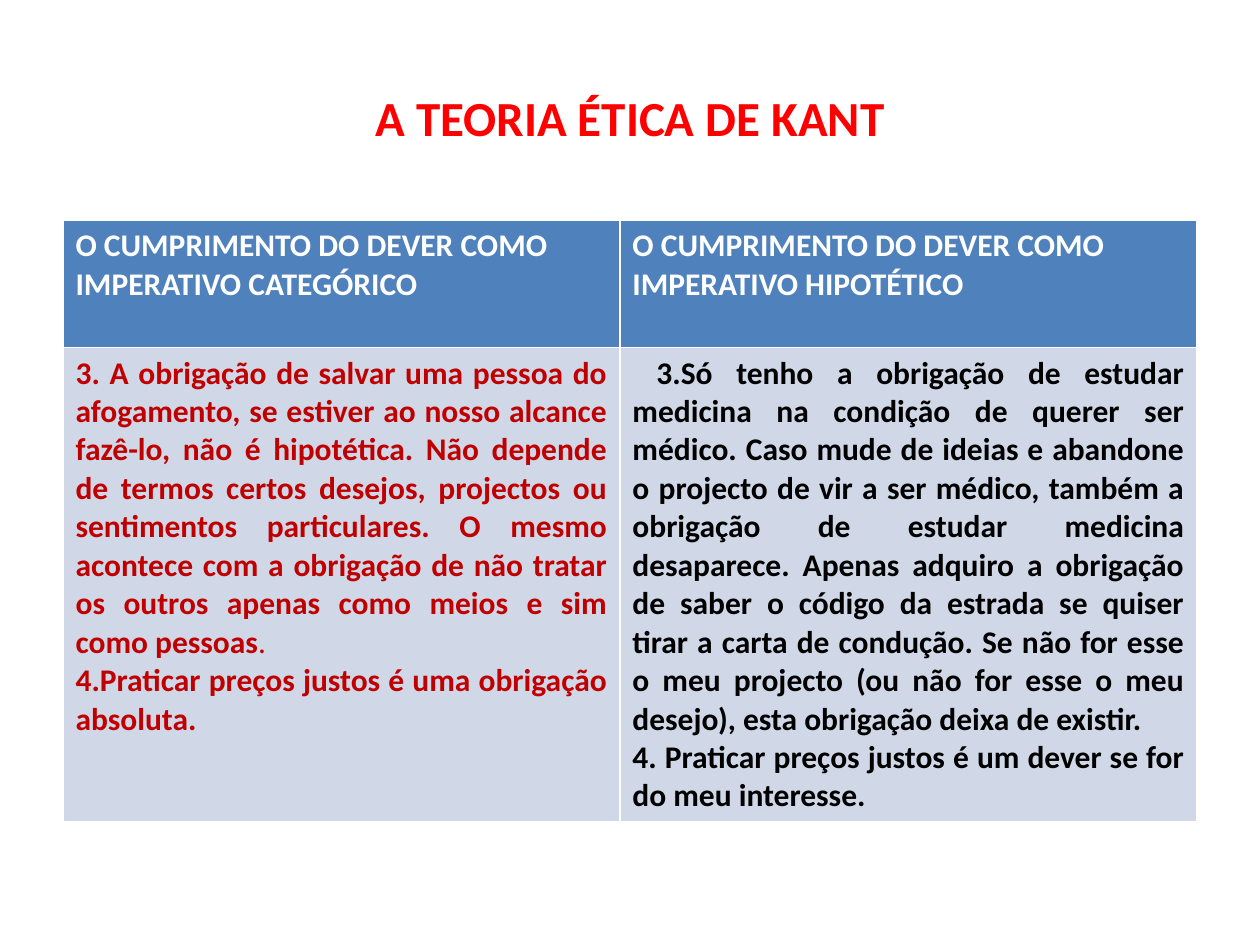
from pptx import Presentation
from pptx.dml.color import RGBColor as Rgb
from pptx.enum.text import MSO_ANCHOR as Anchor, PP_ALIGN as Align
from pptx.util import Inches, Pt

RED = "C00000"
BLACK = "000000"
WHITE = "FFFFFF"
HEADS = [
    "O CUMPRIMENTO DO DEVER COMO IMPERATIVO CATEGÓRICO",
    "O CUMPRIMENTO DO DEVER COMO IMPERATIVO HIPOTÉTICO",
]
DUTY = (
    "3. A obrigação de salvar uma pessoa do afogamento, se estiver ao nosso "
    "alcance fazê-lo, não é hipotética. Não depende de termos certos desejos, "
    "projectos ou sentimentos particulares. O mesmo acontece com a obrigação "
    "de não tratar os outros apenas como meios e sim como pessoas"
)
PRICE = "4.Praticar preços justos é uma obrigação absoluta."
STUDY = (
    "3.Só tenho a obrigação de estudar medicina na condição de querer ser "
    "médico. Caso mude de ideias e abandone o projecto de vir a ser médico, "
    "também a obrigação de estudar medicina desaparece. Apenas adquiro a "
    "obrigação de saber o código da estrada se quiser tirar a carta de "
    "condução. Se não for esse o meu projecto (ou não for esse o meu desejo), "
    "esta obrigação deixa de existir."
)
GAIN = "4. Praticar preços justos é um dever se for do meu interesse."


def paint(item, color):
    item.fill.solid()
    item.fill.fore_color.rgb = Rgb.from_string(color)


def write(para, text, size=18, color=BLACK, bold=True, align=Align.JUSTIFY, indent=0):
    para.alignment = align
    if indent:
        para._p.get_or_add_pPr().set("indent", str(Inches(indent)))
    run = para.add_run()
    run.text = text
    font = run.font
    font.name = "Calibri"
    font.size = Pt(size)
    font.bold = bold
    font.color.rgb = Rgb.from_string(color)


def add_title(slide, text):
    box = slide.shapes.add_textbox(Inches(0.5), Inches(0.3), Inches(9), Inches(1.25))
    frame = box.text_frame
    frame.word_wrap = True
    frame.vertical_anchor = Anchor.MIDDLE
    write(frame.paragraphs[0], text, size=28, color="FF0000", align=Align.CENTER)


def add_grid(slide, widths, heights):
    shape = slide.shapes.add_table(
        len(heights), len(widths), Inches(0.5), Inches(1.75),
        Inches(sum(widths)), Inches(sum(heights)))
    grid = shape.table
    for col, width in zip(grid.columns, widths):
        col.width = Inches(width)
    for row, height, color in zip(grid.rows, heights, ["4F81BD", "D0D8E8"]):
        row.height = Inches(height)
        for cell in row.cells:
            paint(cell, color)
    return grid


def main():
    deck = Presentation()
    deck.slide_width, deck.slide_height = Inches(10), Inches(7.5)
    slide = deck.slides.add_slide(deck.slide_layouts[6])
    paint(slide.background, WHITE)
    add_title(slide, "A TEORIA ÉTICA DE KANT")
    grid = add_grid(slide, [4.42, 4.58], [1.01, 3.76])

    for col, head in enumerate(HEADS):
        para = grid.cell(0, col).text_frame.paragraphs[0]
        write(para, head, color=WHITE, align=Align.LEFT)

    left, right = (grid.cell(1, col).text_frame for col in range(2))
    write(left.paragraphs[0], DUTY, color=RED)
    write(left.paragraphs[0], ".", color=RED, bold=False)
    write(left.add_paragraph(), PRICE, color=RED)
    write(right.paragraphs[0], STUDY, indent=0.19)
    write(right.add_paragraph(), GAIN)
    deck.save("out.pptx")


if __name__ == "__main__":
    main()
